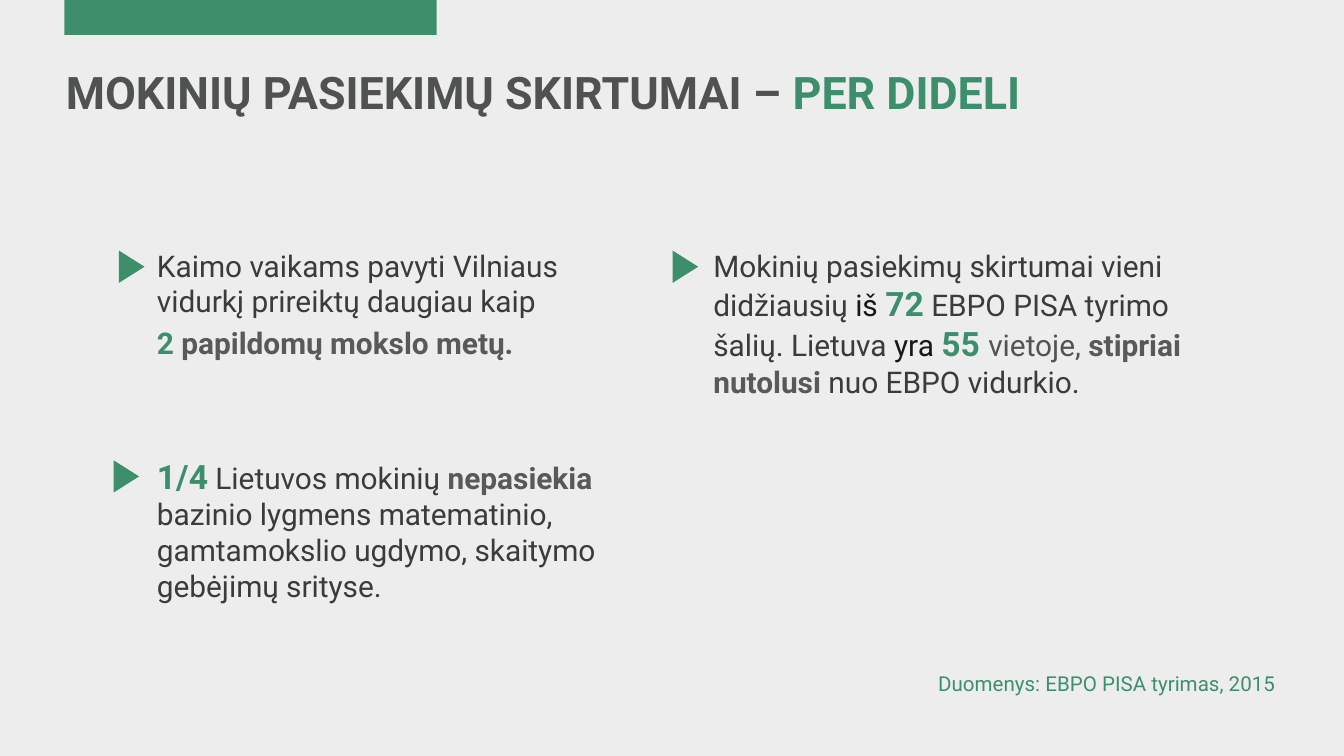
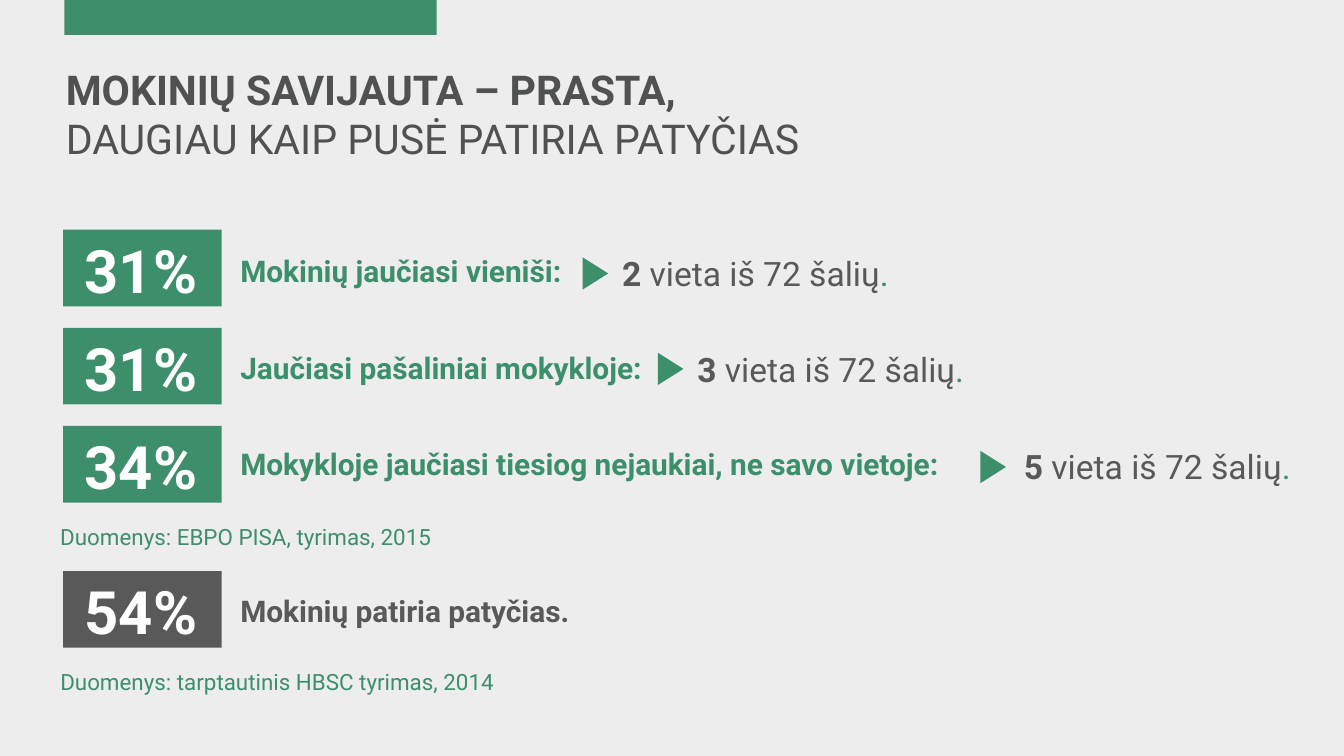
import copy

from pptx import Presentation
from pptx import util as u
from pptx.dml.color import RGBColor
from pptx.enum import shapes, text

PX = 9144
SLIDE_W = 1000

GREEN = RGBColor(0x3D, 0x8F, 0x6C)
FIGURE_GREEN = RGBColor(0x3C, 0x8F, 0x6C)
TITLE_GREY = RGBColor(0x50, 0x51, 0x51)
STRONG_GREY = RGBColor(0x59, 0x59, 0x59)
SOFT_GREY = RGBColor(0x53, 0x53, 0x53)
BODY_GREY = RGBColor(0x3B, 0x3B, 0x3B)
NEAR_BLACK = RGBColor(0x18, 0x18, 0x18)
PAPER = RGBColor(0xED, 0xED, 0xED)
WHITE = RGBColor(0xFF, 0xFF, 0xFF)

FONT = "Roboto"
LEFT, CENTER, RIGHT = text.PP_ALIGN.LEFT, text.PP_ALIGN.CENTER, text.PP_ALIGN.RIGHT
SIDES = ("margin_left", "margin_top", "margin_right", "margin_bottom")
TIGHT = dict.fromkeys(SIDES, 3 * PX)
FRAME = {
    "word_wrap": True,
    "auto_size": text.MSO_AUTO_SIZE.NONE,
    "vertical_anchor": text.MSO_ANCHOR.TOP,
}

PLAIN = {"size": 16, "color": BODY_GREY, "bold": False}
STRONG = {"size": 16, "color": STRONG_GREY, "bold": True}
LABEL = {**STRONG, "color": GREEN}
FIGURE = {"size": 18, "color": FIGURE_GREEN, "bold": True}
RANK = {"size": 18, "color": STRONG_GREY, "bold": False}
PERCENT = {"size": 32, "color": WHITE, "bold": True}
SOURCE = {"size": 12, "color": GREEN, "bold": False}
TITLE = {"size": 24, "color": TITLE_GREY, "bold": True}


def set_all(target, values):
    for name, value in values.items():
        setattr(target, name, value)


def box(left, top, width, height):
    return [length * PX for length in (left, top, width, height)]


def break_line(paragraph, run):
    paragraph.add_line_break()
    paragraph._p[-1].append(copy.deepcopy(run._r.rPr))


def write(frame, paragraphs, align=LEFT, spaced=True):
    for index, pieces in enumerate(paragraphs):
        paragraph = frame.paragraphs[0] if index == 0 else frame.add_paragraph()
        paragraph.alignment = align
        paragraph.space_before = u.Pt(pieces[0][1]["size"] / 5 if spaced else 0)
        for words, style in pieces:
            run = paragraph.add_run()
            run.text = words.rstrip("\n")
            set_all(run.font, {"name": FONT, "size": u.Pt(style["size"]), "bold": style["bold"]})
            run.font.color.rgb = style["color"]
            if words.endswith("\n"):
                break_line(paragraph, run)


def add_text(slide, place, paragraphs, align=LEFT):
    frame = slide.shapes.add_textbox(*box(*place)).text_frame
    set_all(frame, FRAME)
    write(frame, paragraphs, align)


def add_block(slide, place, color, kind=shapes.MSO_SHAPE.RECTANGLE, rotation=0):
    block = slide.shapes.add_shape(kind, *box(*place))
    block.shadow.inherit = False
    block.fill.solid()
    block.fill.fore_color.rgb = color
    block.line.fill.background()
    block.rotation = rotation


def add_marker(slide, left, top):
    add_block(slide, (left, top, 24, 19), GREEN, shapes.MSO_SHAPE.ISOSCELES_TRIANGLE, 90)


def add_percent(slide, top, percent, color):
    add_block(slide, (47, top, 118, 57), color)
    frame = slide.shapes.add_textbox(*box(35, top, 140, 57)).text_frame
    set_all(frame, {**FRAME, **TIGHT})
    write(frame, [[(percent, PERCENT)]], CENTER, spaced=False)


def add_rank(slide, top, left, rank):
    pieces = [
        (rank, {**RANK, "bold": True}),
        (" vieta iš 72 šalių", RANK),
        (".", {**RANK, "color": GREEN}),
    ]
    add_text(slide, (left, top, min(352, SLIDE_W - left), 39), [pieces])


def add_titled_slide(deck, pieces, width):
    slide = deck.slides.add_slide(deck.slide_layouts[5])
    add_block(slide, (48, 0, 277, 26), GREEN)
    heading = slide.shapes.title
    heading.left, heading.top, heading.width, heading.height = box(46, 45, width, 86)
    set_all(heading.text_frame, {**FRAME, **TIGHT})
    write(heading.text_frame, [pieces], spaced=False)
    return slide


def add_gap_slide(deck):
    slide = add_titled_slide(deck, [
        ("MOKINIŲ PASIEKIMŲ SKIRTUMAI – ", TITLE),
        ("PER DIDELI", {**TITLE, "color": GREEN}),
    ], 848)
    add_text(slide, (107, 179, 367, 88), [
        [("Kaimo vaikams pavyti Vilniaus vidurkį prireiktų daugiau kaip", PLAIN)],
        [("2 ", {**FIGURE, "size": 16}), ("papildomų mokslo metų.", STRONG)],
    ])
    add_text(slide, (107, 334, 393, 88), [[
        ("1/4", FIGURE),
        (" Lietuvos mokinių ", PLAIN),
        ("nepasiekia ", STRONG),
        ("bazinio lygmens matematinio, gamtamokslio ugdymo, "
         "skaitymo gebėjimų srityse.", PLAIN),
    ]])
    add_text(slide, (521, 179, 394, 89), [[
        ("Mokinių pasiekimų skirtumai vieni didžiausių ", PLAIN),
        ("iš ", {**PLAIN, "color": NEAR_BLACK}),
        ("72", FIGURE),
        (" ", STRONG),
        ("EBPO PISA tyrimo šalių. Lietuva ", PLAIN),
        ("yra ", {**PLAIN, "color": NEAR_BLACK}),
        ("55 ", FIGURE),
        ("vietoje, ", {**PLAIN, "color": SOFT_GREY}),
        ("stipriai nutolusi ", STRONG),
        ("nuo EBPO vidurkio.", PLAIN),
    ]])
    for left, top in ((86, 189), (82, 345), (498, 189)):
        add_marker(slide, left, top)
    add_text(slide, (587, 494, 372, 36),
             [[("Duomenys: EBPO PISA tyrimas, 2015", {**SOURCE, "size": 11})]], RIGHT)


def add_wellbeing_slide(deck):
    heading = {**TITLE, "size": 22}
    slide = add_titled_slide(deck, [
        ("MOKINIŲ SAVIJAUTA – PRASTA,\n", heading),
        ("DAUGIAU KAIP PUSĖ PATIRIA PATYČIAS", {**heading, "bold": False}),
    ], 911)
    feelings = (
        ("31%", "Mokinių jaučiasi vieniši:", (169, 183, 352, 39), (431, 194), 453, "2"),
        ("31%", "Jaučiasi pašaliniai mokykloje:", (169, 255, 378, 39), (487, 265), 509, "3"),
        ("34%", "Mokykloje jaučiasi tiesiog nejaukiai, ne savo vietoje:",
         (169, 327, 646, 42), (727, 338), 752, "5"),
    )
    for row, (percent, feeling, place, marker, rank_left, rank) in enumerate(feelings):
        add_percent(slide, 171 + 73 * row, percent, GREEN)
        add_text(slide, place, [[(feeling, LABEL)]])
        add_marker(slide, *marker)
        add_rank(slide, place[1], rank_left, rank)
    add_percent(slide, 425, "54%", STRONG_GREY)
    add_text(slide, (169, 436, 378, 39), [[("Mokinių patiria patyčias.", STRONG)]])
    add_text(slide, (35, 384, 323, 46), [[("Duomenys: EBPO PISA, tyrimas, 2015", SOURCE)]])
    add_text(slide, (35, 492, 398, 35),
             [[("Duomenys: tarptautinis HBSC tyrimas, 2014", SOURCE)]])


def main():
    deck = Presentation()
    deck.slide_width = SLIDE_W * PX
    deck.slide_height = deck.slide_width * 9 // 16
    paper = deck.slide_master.background.fill
    paper.solid()
    paper.fore_color.rgb = PAPER
    add_gap_slide(deck)
    add_wellbeing_slide(deck)
    deck.save("out.pptx")


if __name__ == "__main__":
    main()
